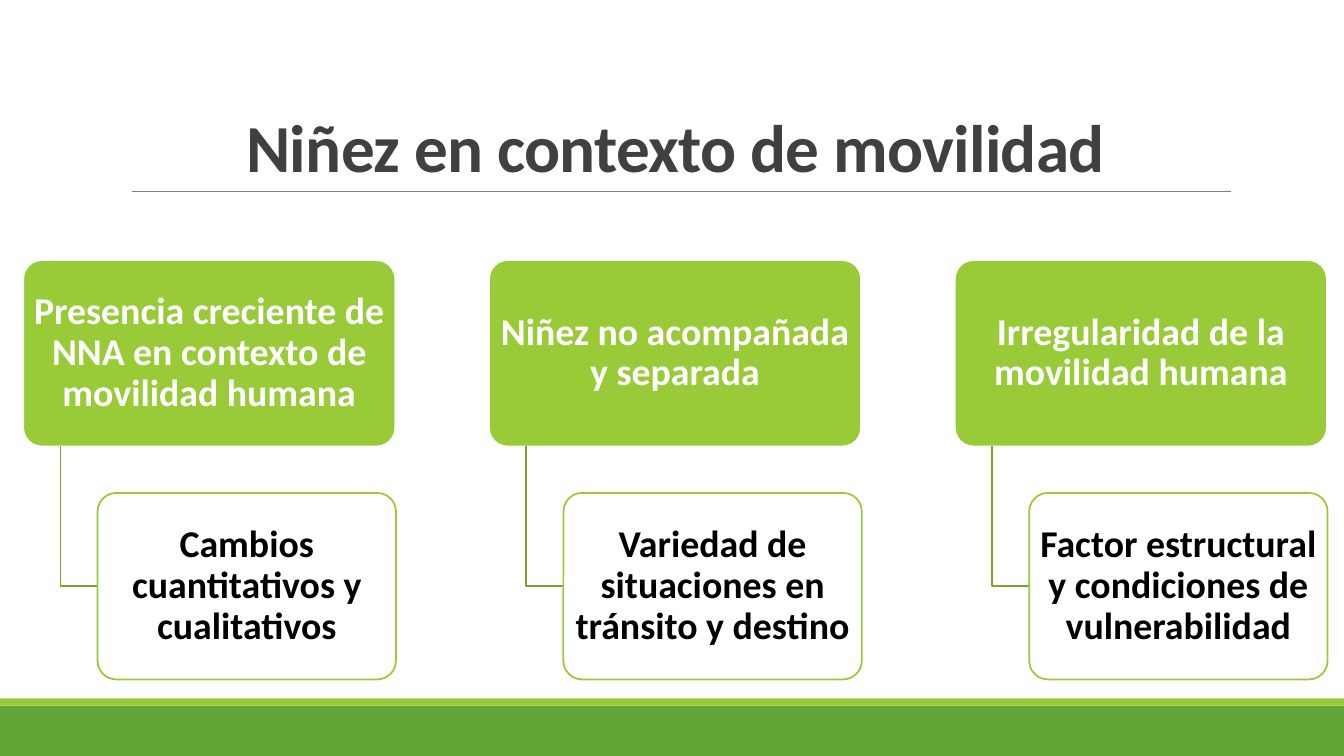
from lxml.etree import SubElement
from pptx import Presentation
from pptx.dml.color import RGBColor
from pptx.enum.shapes import MSO_CONNECTOR, MSO_SHAPE
from pptx.enum.text import MSO_ANCHOR, PP_ALIGN
from pptx.oxml.ns import qn
from pptx.util import Inches, Pt

COLORS = {
    "band": "63A537", "lime": "99CB38", "elbow": "7BA32D", "rule": "808080",
    "title": "404040", "white": "FFFFFF", "black": "000000",
}
FONT = "Calibri"
WIDTH, HEIGHT = 13.33, 7.5

COLUMN_LEFT, COLUMN_STEP = 0.23, 4.62
TOPIC_TOP, TOPIC_WIDTH, BOX_HEIGHT = 2.58, 3.69, 1.85
DETAIL_TOP, DETAIL_WIDTH = 4.89, 2.96
INDENT = TOPIC_WIDTH / 10

TOPICS = [
    ("Presencia creciente de NNA en contexto de movilidad humana",
     "Cambios cuantitativos y cualitativos"),
    ("Niñez no acompañada y separada",
     "Variedad de situaciones en tránsito y destino"),
    ("Irregularidad de la movilidad humana",
     "Factor estructural y condiciones de vulnerabilidad"),
]


def color(name):
    return RGBColor.from_string(COLORS[name])


def set_line(line, name, width):
    line.color.rgb = color(name)
    line.width = Pt(width)


def add_text(shape, text, size, color_name, anchor, spacing):
    frame = shape.text_frame
    frame.word_wrap = True
    frame.vertical_anchor = anchor
    paragraph = frame.paragraphs[0]
    paragraph.alignment = PP_ALIGN.CENTER
    paragraph.line_spacing = spacing
    run = paragraph.add_run()
    run.text = text
    run.font.name = FONT
    run.font.size = Pt(size)
    run.font.bold = True
    run.font.color.rgb = color(color_name)
    return run


def add_band(slide, top, height, fill):
    band = slide.shapes.add_shape(
        MSO_SHAPE.RECTANGLE, 0, Inches(top), Inches(WIDTH), Inches(height))
    band.shadow.inherit = False
    band.fill.solid()
    band.fill.fore_color.rgb = color(fill)
    band.line.fill.background()


def add_title(slide, text):
    box = slide.shapes.add_textbox(
        Inches(1.2), Inches(0.31), Inches(11), Inches(1.59))
    run = add_text(box, text, 48, "title", MSO_ANCHOR.BOTTOM, 0.85)
    run.font._element.set("spc", "-50")


def add_rule(slide, left, right, top):
    rule = slide.shapes.add_connector(
        MSO_CONNECTOR.STRAIGHT, Inches(left), Inches(top), Inches(right), Inches(top))
    set_line(rule.line, "rule", 0.5)
    SubElement(rule._element.spPr, qn("a:effectLst"))


def add_box(slide, left, top, width, text, fill, outline, text_color):
    box = slide.shapes.add_shape(
        MSO_SHAPE.ROUNDED_RECTANGLE,
        Inches(left), Inches(top), Inches(width), Inches(BOX_HEIGHT))
    box.adjustments[0] = 0.1
    box.shadow.inherit = False
    box.fill.solid()
    box.fill.fore_color.rgb = color(fill)
    set_line(box.line, outline, 1.25)
    frame = box.text_frame
    frame.margin_left = frame.margin_right = Inches(0.05)
    frame.margin_top = frame.margin_bottom = Inches(0.04)
    add_text(box, text, 27, text_color, MSO_ANCHOR.MIDDLE, 0.9)
    return box


def add_elbow(slide, left, top, right, bottom):
    """Draw an open line down from a topic and across to its detail."""
    builder = slide.shapes.build_freeform(Inches(left), Inches(top))
    builder.add_line_segments(
        [(Inches(left), Inches(bottom)), (Inches(right), Inches(bottom))], close=False)
    elbow = builder.convert_to_shape()
    elbow.shadow.inherit = False
    elbow.fill.background()
    set_line(elbow.line, "elbow", 1.25)


def add_column(slide, left, topic, detail):
    detail_left = left + 2 * INDENT
    add_box(slide, left, TOPIC_TOP, TOPIC_WIDTH, topic, "lime", "white", "white")
    add_elbow(slide, left + INDENT, TOPIC_TOP + BOX_HEIGHT,
              detail_left, DETAIL_TOP + BOX_HEIGHT / 2)
    add_box(slide, detail_left, DETAIL_TOP, DETAIL_WIDTH, detail,
            "white", "lime", "black")


def main():
    presentation = Presentation()
    presentation.slide_width = Inches(WIDTH)
    presentation.slide_height = Inches(HEIGHT)
    slide = presentation.slides.add_slide(presentation.slide_layouts[6])
    add_band(slide, 7, 0.5, "band")
    add_band(slide, 6.93, 0.07, "lime")
    add_rule(slide, 1.31, 12.21, 1.9)
    add_title(slide, "Niñez en contexto de movilidad")
    for index, (topic, detail) in enumerate(TOPICS):
        add_column(slide, COLUMN_LEFT + index * COLUMN_STEP, topic, detail)
    presentation.save("out.pptx")


if __name__ == "__main__":
    main()
